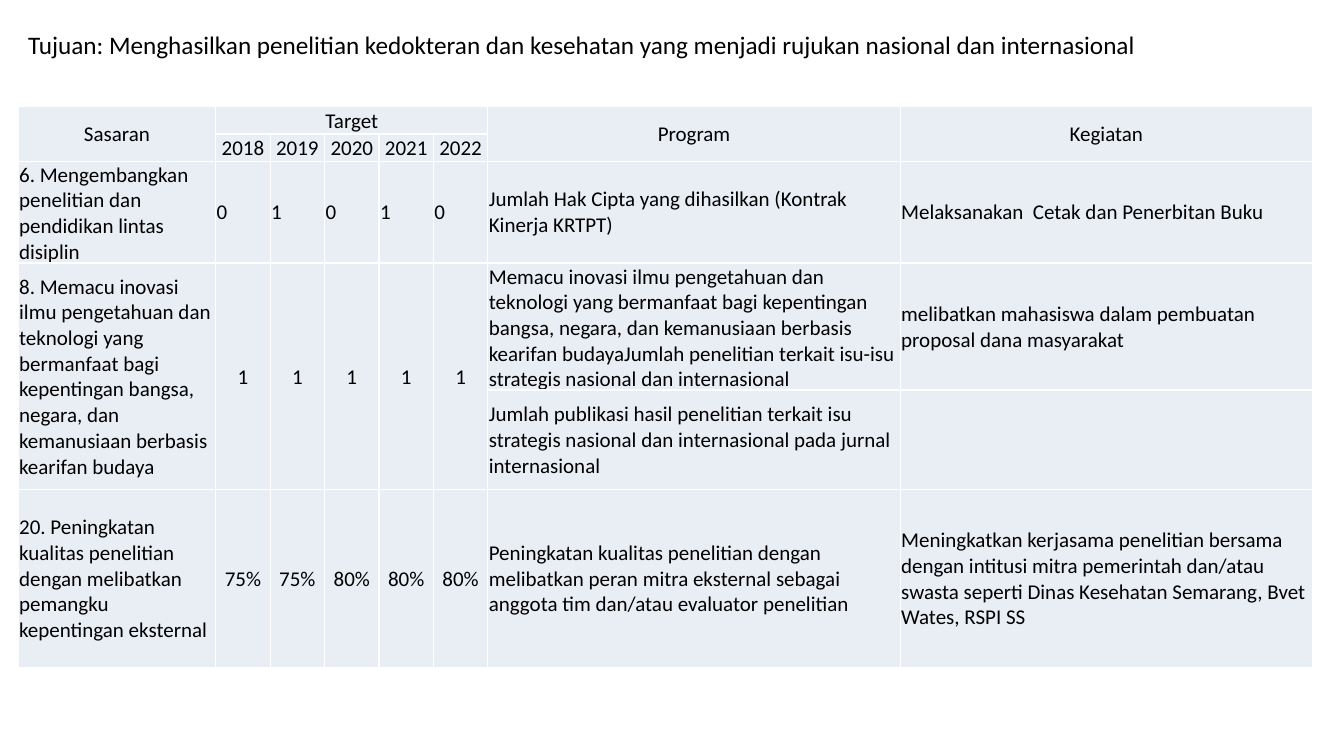
from lxml import etree
from pptx import Presentation
from pptx import util as u
from pptx.dml.color import RGBColor
from pptx.enum import text
from pptx.oxml.ns import qn

FONT, INK, PALE, WHITE = "Calibri", "000000", "E9EDF4", "FFFFFF"
COLS = [1.96] + [0.54] * 5 + [4.09] * 2
ROWS = [0.27, 0.27, 1.01, 1.26, 0.99, 1.76]
YEARS = range(1, 6)
# Merged areas: first row, first column, last row, last column
MERGES = ([(0, 1, 0, 5)] + [(0, c, 1, c) for c in (0, 6, 7)]
          + [(3, c, 4, c) for c in range(6)])
CELLS = [
    ["Sasaran", "Target", "", "", "", "", "Program", "Kegiatan"],
    ["", "2018", "2019", "2020", "2021", "2022", "", ""],
    ["6. Mengembangkan penelitian dan pendidikan lintas disiplin",
     "0", "1", "0", "1", "0",
     "Jumlah Hak Cipta yang dihasilkan (Kontrak Kinerja KRTPT)",
     "Melaksanakan  Cetak dan Penerbitan Buku"],
    ["8. Memacu inovasi ilmu pengetahuan dan teknologi yang bermanfaat bagi "
     "kepentingan bangsa, negara, dan kemanusiaan berbasis kearifan budaya",
     "1", "1", "1", "1", "1",
     "Memacu inovasi ilmu pengetahuan dan teknologi yang bermanfaat bagi "
     "kepentingan bangsa, negara, dan kemanusiaan berbasis kearifan "
     "budayaJumlah penelitian terkait isu-isu strategis nasional dan internasional",
     "melibatkan mahasiswa dalam pembuatan proposal dana masyarakat"],
    ["", "", "", "", "", "",
     "Jumlah publikasi hasil penelitian terkait isu strategis nasional dan "
     "internasional pada jurnal internasional", ""],
    ["20. Peningkatan kualitas penelitian dengan melibatkan pemangku "
     "kepentingan eksternal",
     "75%", "75%", "80%", "80%", "80%",
     "Peningkatan kualitas penelitian dengan melibatkan peran mitra eksternal "
     "sebagai anggota tim dan/atau evaluator penelitian",
     "Meningkatkan kerjasama penelitian bersama dengan intitusi mitra pemerintah "
     "dan/atau swasta seperti Dinas Kesehatan Semarang, Bvet Wates, RSPI SS"],
]


def rgb(value):
    return RGBColor.from_string(value)


def style(p, size, align):
    p.alignment = align
    p.font.name, p.font.size = FONT, u.Pt(size)
    p.font.color.rgb = rgb(INK)


def add_borders(cell):
    tcPr = cell._tc.get_or_add_tcPr()
    for i, side in enumerate(("lnL", "lnR", "lnT", "lnB")):
        ln = etree.Element(qn(f"a:{side}"), w=str(u.Pt(1)))
        fill = etree.SubElement(ln, qn("a:solidFill"))
        etree.SubElement(fill, qn("a:srgbClr"), val=WHITE)
        tcPr.insert(i, ln)


def add_title(s, x, y, w, h):
    sp = s.shapes.title
    sp.left, sp.top, sp.width, sp.height = map(u.Inches, (x, y, w, h))
    tf = sp.text_frame
    tf.text = ("Tujuan: Menghasilkan penelitian kedokteran dan kesehatan yang "
               "menjadi rujukan nasional dan internasional")
    tf.word_wrap = True
    tf.auto_size = text.MSO_AUTO_SIZE.SHAPE_TO_FIT_TEXT
    tf.vertical_anchor = text.MSO_ANCHOR.TOP
    style(tf.paragraphs[0], 18, text.PP_ALIGN.LEFT)


def add_targets(s, x, y, w, h):
    frame = s.shapes.add_table(len(ROWS), len(COLS), *map(u.Inches, (x, y, w, h)))
    tbl = frame.table
    tbl.first_row = tbl.horz_banding = False
    for col, width in zip(tbl.columns, COLS):
        col.width = u.Inches(width)
    for row, height in zip(tbl.rows, ROWS):
        row.height = u.Inches(height)

    # Cell text and look
    for r, line in enumerate(CELLS):
        for c, words in enumerate(line):
            cell = tbl.cell(r, c)
            cell.text = words
            cell.margin_left = cell.margin_right = cell.margin_top = u.Inches(0.01)
            cell.margin_bottom = 0
            cell.vertical_anchor = (text.MSO_ANCHOR.BOTTOM if words == "Target"
                                    else text.MSO_ANCHOR.MIDDLE)
            cell.fill.solid()
            cell.fill.fore_color.rgb = rgb(PALE)
            add_borders(cell)
            centred = r < 2 or (c in YEARS and r != 2)
            style(cell.text_frame.paragraphs[0], 15,
                  text.PP_ALIGN.CENTER if centred else text.PP_ALIGN.LEFT)

    # Merged headings and goals
    for top, left, bottom, right in MERGES:
        tbl.cell(top, left).merge(tbl.cell(bottom, right))


def main():
    prs = Presentation()
    prs.slide_width, prs.slide_height = u.Inches(13.33), u.Inches(7.5)
    s = prs.slides.add_slide(prs.slide_layouts[5])
    add_title(s, 0.18, 0.24, 11.84, 0.4)
    add_targets(s, 0.18, 1.06, sum(COLS), sum(ROWS))
    prs.save("out.pptx")


if __name__ == "__main__":
    main()
